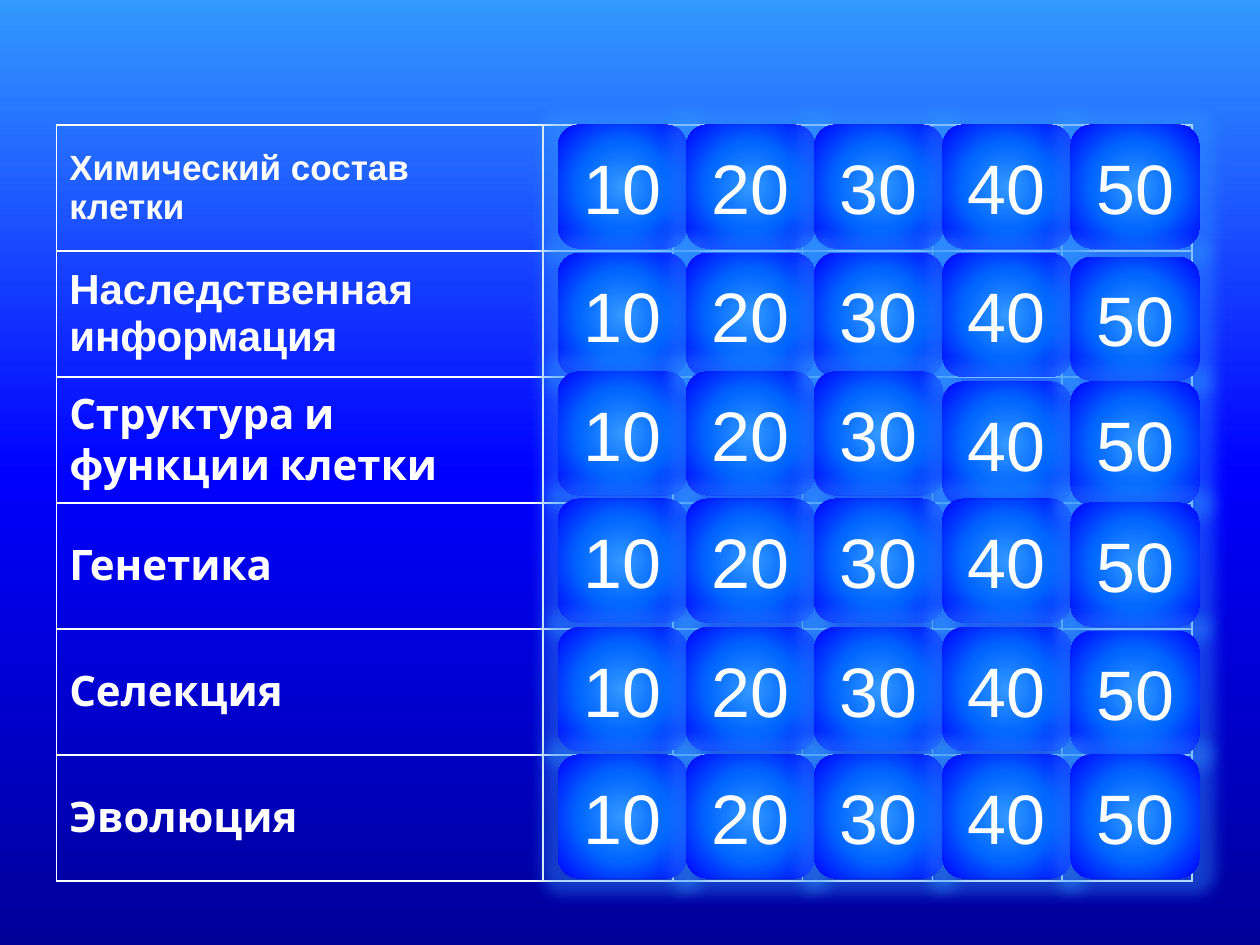
from dataclasses import dataclass
from itertools import product

from lxml.etree import SubElement as add_child
from pptx import Presentation
from pptx.dml.color import RGBColor as Color
from pptx.enum.shapes import MSO_SHAPE as Shape
from pptx.enum.text import MSO_ANCHOR as Anchor, PP_ALIGN as Align
from pptx.oxml.ns import qn
from pptx.util import Inches, Pt


@dataclass(frozen=True)
class Theme:
    white: str = "FFFFFF"
    glow: str = "3399FF"
    glow_alpha: int = 40000
    glow_radius: int = 18
    backdrop: tuple = ((0, "000099"), (50, "0000FF"), (100, "3399FF"))
    tile: tuple = ((0, "3399FF"), (50, "0066FF"), (100, "0000FF"))
    main_font: str = "Arial"
    topic_font: str = "Cabin"
    small: int = 20
    medium: int = 24
    large: int = 40


TOPICS = [
    ("Химический состав клетки", Theme.main_font, Theme.small),
    ("Наследственная информация", Theme.main_font, Theme.medium),
    ("Структура и функции клетки", Theme.topic_font, Theme.medium),
    ("Генетика", Theme.topic_font, Theme.medium),
    ("Селекция", Theme.topic_font, Theme.medium),
    ("Эволюция", Theme.topic_font, Theme.medium),
]
POINTS = [10, 20, 30, 40, 50]
TILE_TOPS = [0.99, 2.01, 2.95, 3.96, 4.98, 5.99]
TILE_LEFT, TILE_STEP = 4.43, 1.017
NUDGES = {(1, 4): 0.03, (2, 3): 0.08, (2, 4): 0.08, (3, 4): 0.03, (4, 4): 0.03}


def write_text(frame, text, *, font, size, color, bold=False, align=Align.LEFT):
    para = frame.paragraphs[0]
    para.alignment = align
    span = para.add_run()
    span.text = text
    span.font.name = font
    span.font.size = Pt(size)
    span.font.bold = bold
    span.font.color.rgb = Color.from_string(color)


def add_color(parent, color):
    return add_child(parent, qn("a:srgbClr"), val=color)


def set_gradient(gradient, stops, angle=None):
    for child in list(gradient):
        gradient.remove(child)
    stop_list = add_child(gradient, qn("a:gsLst"))
    for position, color in stops:
        add_color(add_child(stop_list, qn("a:gs"), pos=str(position * 1000)), color)
    if angle is None:
        radial = add_child(gradient, qn("a:path"), path="circle")
        sides = dict.fromkeys("ltrb", "50000")
        add_child(radial, qn("a:fillToRect"), **sides)
    else:
        add_child(gradient, qn("a:lin"), ang=str(angle * 60000), scaled="1")


class Board:
    def __init__(self, page, theme):
        self.page = page
        self.theme = theme

    def backdrop(self):
        self.page.background.fill.gradient()
        gradient = self.page.element.find(".//" + qn("a:gradFill"))
        set_gradient(gradient, self.theme.backdrop, angle=270)

    def style_cell(self, cell):
        properties = cell._tc.get_or_add_tcPr()
        for side in ("lnL", "lnR", "lnT", "lnB"):
            line = add_child(properties, qn("a:" + side), w=str(Pt(1)))
            add_color(add_child(line, qn("a:solidFill")), self.theme.white)
        cell.fill.background()
        cell.vertical_anchor = Anchor.MIDDLE

    def topic_table(self, left, top, widths, height, topics):
        frame = self.page.shapes.add_table(
            len(topics), len(widths), Inches(left), Inches(top),
            Inches(sum(widths)), Inches(height * len(topics)))
        table = frame.table
        table.first_row = False
        table.horz_banding = False
        for column, width in zip(table.columns, widths):
            column.width = Inches(width)
        for row in table.rows:
            row.height = Inches(height)
        for cell in table.iter_cells():
            self.style_cell(cell)
        for index, (text, font, size) in enumerate(topics):
            write_text(table.cell(index, 0).text_frame, text, font=font,
                       size=size, color=self.theme.white, bold=True)

    def tile(self, left, top, points):
        box = self.page.shapes.add_shape(
            Shape.ROUNDED_RECTANGLE, Inches(left), Inches(top),
            Inches(1.02), Inches(0.98))
        box.line.fill.background()
        box.fill.gradient()
        properties = box.element.spPr
        set_gradient(properties.find(qn("a:gradFill")), self.theme.tile)
        box.shadow.inherit = False
        effects = properties.find(qn("a:effectLst"))
        glow = add_child(effects, qn("a:glow"), rad=str(Pt(self.theme.glow_radius)))
        tint = add_color(glow, self.theme.glow)
        add_child(tint, qn("a:alpha"), val=str(self.theme.glow_alpha))
        frame = box.text_frame
        frame.word_wrap = False
        frame.vertical_anchor = Anchor.MIDDLE
        write_text(frame, str(points), font=self.theme.main_font,
                   size=self.theme.large, color=self.theme.white, align=Align.CENTER)


def stacking_order(place):
    row, column = place
    last = len(TOPICS) - 1
    band = 0 if row == 0 else 2 if row == last else 1
    return band, column, row


def main():
    deck = Presentation()
    deck.slide_width, deck.slide_height = Inches(10), Inches(7.5)
    page = deck.slides.add_slide(deck.slide_layouts[6])
    board = Board(page, Theme())
    board.backdrop()
    board.topic_table(0.45, 0.99, [3.86] + [1.03] * len(POINTS), 1, TOPICS)
    places = product(range(len(TOPICS)), range(len(POINTS)))
    for row, column in sorted(places, key=stacking_order):
        top = TILE_TOPS[row] + NUDGES.get((row, column), 0)
        board.tile(TILE_LEFT + column * TILE_STEP, top, POINTS[column])
    deck.save("out.pptx")


if __name__ == "__main__":
    main()
